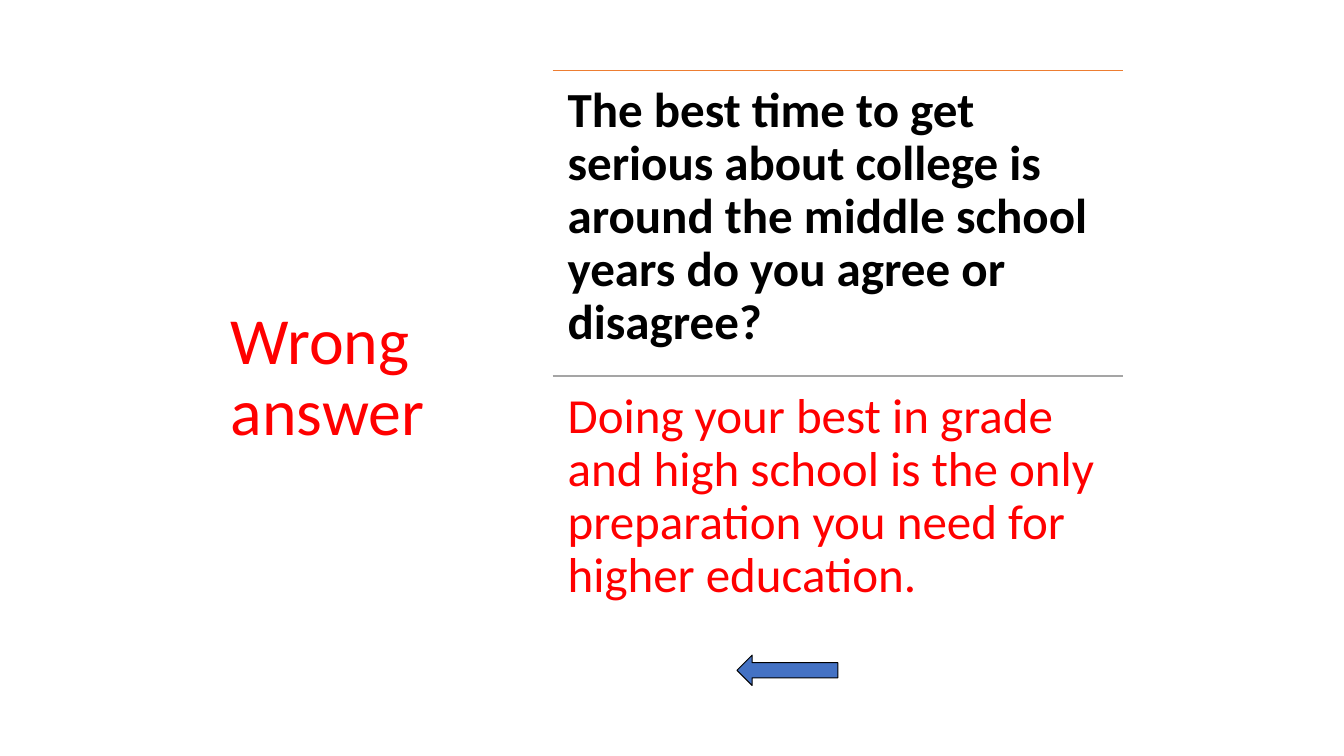
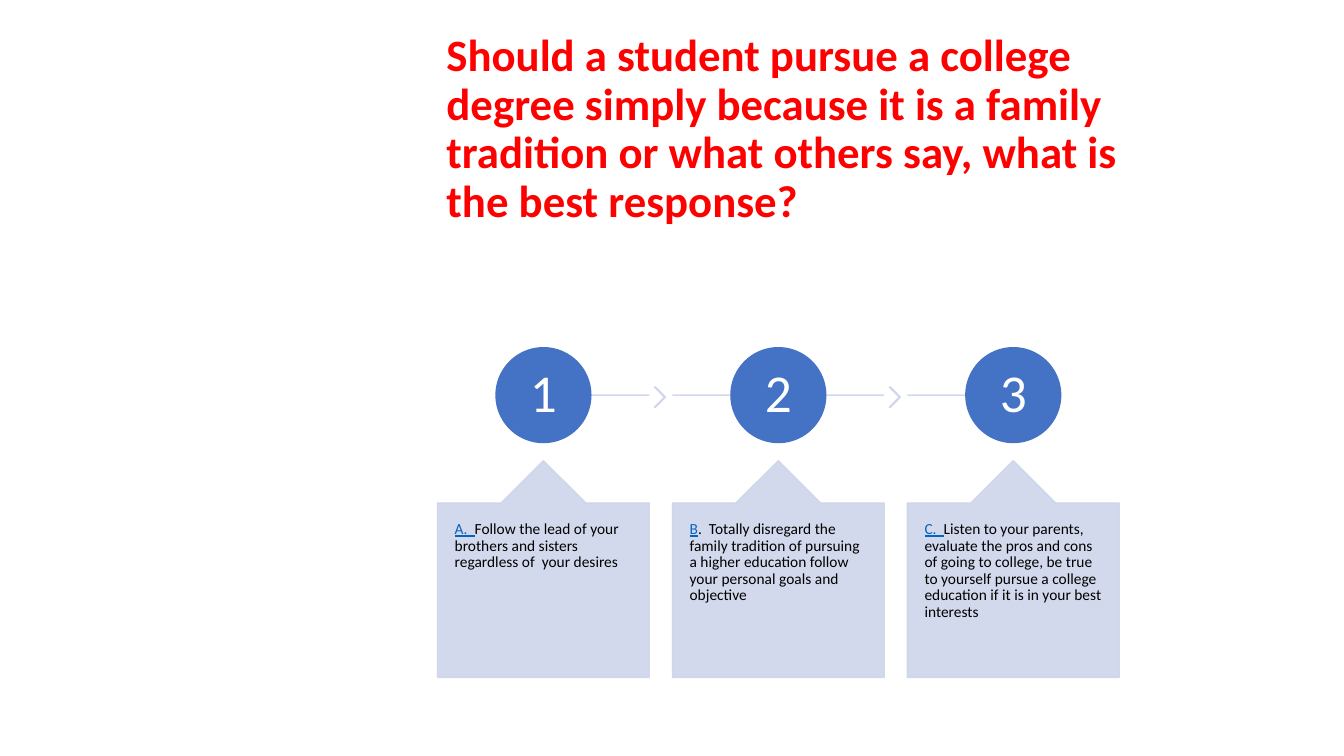
from dataclasses import dataclass
from typing import NamedTuple

from pptx import Presentation
from pptx.dml.color import RGBColor
from pptx.enum.shapes import MSO_CONNECTOR, MSO_SHAPE
from pptx.enum.text import MSO_ANCHOR, PP_ALIGN
from pptx.oxml.ns import qn
from pptx.oxml.xmlchemy import OxmlElement
from pptx.util import Inches, Pt

STRAIGHT = MSO_CONNECTOR.STRAIGHT
CHEVRON = MSO_SHAPE.CHEVRON
CIRCLE = MSO_SHAPE.OVAL
CALLOUT = MSO_SHAPE.UP_ARROW_CALLOUT
LEFT_ARROW = MSO_SHAPE.LEFT_ARROW
TOP, MIDDLE = MSO_ANCHOR.TOP, MSO_ANCHOR.MIDDLE
LEFT, CENTER = PP_ALIGN.LEFT, PP_ALIGN.CENTER


@dataclass(frozen=True)
class Theme:
    font: str = "Calibri"
    black: str = "000000"
    white: str = "FFFFFF"
    red: str = "FF0000"
    blue: str = "4472C4"
    pale_blue: str = "CFD5EA"
    orange: str = "ED7D31"
    gray: str = "A5A5A5"
    link: str = "0563C1"
    pale_opacity: int = 90
    line_spacing: float = 0.9
    verdict_size: int = 47
    number_size: int = 38
    statement_size: int = 35
    question_size: int = 32
    answer_size: int = 11


THEME = Theme()


class Box(NamedTuple):
    left: float
    top: float
    width: float
    height: float

    def lengths(self) -> list:
        return [Inches(value) for value in self]


class Run(NamedTuple):
    text: str
    size: int
    color: str
    bold: bool = False
    underline: bool = False


class Statement(NamedTuple):
    text: str
    color: str
    bold: bool
    rule_color: str


class Answer(NamedTuple):
    label: str
    text: str


STATEMENTS = [
    Statement("The best time to get serious about college is around the middle "
              "school years do you agree or disagree?",
              THEME.black, True, THEME.orange),
    Statement("Doing your best in grade and high school is the only preparation "
              "you need for higher education.",
              THEME.red, False, THEME.gray),
]
ANSWERS = [
    Answer("A.  ", "Follow the lead of your brothers and sisters regardless of  "
           "your desires"),
    Answer("B", ".  Totally disregard the family tradition of pursuing a higher "
           "education follow your personal goals and objective"),
    Answer("C.  ", "Listen to your parents, evaluate the pros and cons  of going "
           "to college, be true to yourself pursue a college education if it is "
           "in your best interests"),
]


def write(shape, runs: list[Run], anchor=TOP, align=LEFT,
          insets: tuple[float, float] = (0.1, 0.05)) -> None:
    """Fill a shape with one paragraph; insets are horizontal, vertical."""
    frame = shape.text_frame
    frame.word_wrap = True
    frame.vertical_anchor = anchor
    frame.margin_left = frame.margin_right = Inches(insets[0])
    frame.margin_top = frame.margin_bottom = Inches(insets[1])
    paragraph = frame.paragraphs[0]
    paragraph.alignment = align
    paragraph.line_spacing = THEME.line_spacing
    for item in runs:
        run = paragraph.add_run()
        run.text = item.text
        run.font.name = THEME.font
        run.font.size = Pt(item.size)
        run.font.bold = item.bold
        run.font.underline = item.underline
        run.font.color.rgb = RGBColor.from_string(item.color)


def add_text(slide, box: Box, run: Run, anchor=TOP,
             insets: tuple[float, float] = (0.1, 0.05)) -> None:
    write(slide.shapes.add_textbox(*box.lengths()), [run], anchor, insets=insets)


def set_opacity(shape, percent: int) -> None:
    for color in shape._element.spPr.iter(qn("a:srgbClr")):
        alpha = OxmlElement("a:alpha")
        alpha.set("val", str(percent * 1000))
        color.append(alpha)


def add_shape(slide, kind, box: Box, fill: str, line: str, line_width: float = 1,
              opacity: int = 100, adjustments: tuple[float, ...] = ()):
    shape = slide.shapes.add_shape(kind, *box.lengths())
    shape.shadow.inherit = False
    shape.fill.solid()
    shape.fill.fore_color.rgb = RGBColor.from_string(fill)
    shape.line.color.rgb = RGBColor.from_string(line)
    shape.line.width = Pt(line_width)
    for index, value in enumerate(adjustments):
        shape.adjustments[index] = value
    if opacity < 100:
        set_opacity(shape, opacity)
    return shape


def add_pale_shape(slide, kind, box: Box, adjustments: tuple[float, ...]):
    return add_shape(slide, kind, box, THEME.pale_blue, THEME.pale_blue,
                     opacity=THEME.pale_opacity, adjustments=adjustments)


def add_rule(slide, left: float, right: float, y: float, color: str,
             opacity: int = 100) -> None:
    rule = slide.shapes.add_connector(
        STRAIGHT, Inches(left), Inches(y), Inches(right), Inches(y))
    rule.line.color.rgb = RGBColor.from_string(color)
    rule.line.width = Pt(1)
    rule._element.spPr.append(OxmlElement("a:effectLst"))
    if opacity < 100:
        set_opacity(rule, opacity)


def add_blank_slide(presentation):
    return presentation.slides.add_slide(presentation.slide_layouts[6])


def build_wrong_answer(presentation) -> None:
    slide = add_blank_slide(presentation)
    add_text(slide, Box(2.19, 0.7, 2.8, 6.11),
             Run("Wrong answer", THEME.verdict_size, THEME.red), MIDDLE)
    left, top, width, height = 5.48, 0.7, 5.66, 3.03
    for index, statement in enumerate(STATEMENTS):
        y = top + index * height
        add_rule(slide, left, left + width, y, statement.rule_color)
        add_text(slide, Box(left, y, width, height),
                 Run(statement.text, THEME.statement_size, statement.color,
                     statement.bold), insets=(0.15, 0.15))
    add_shape(slide, LEFT_ARROW, Box(7.31, 6.5, 1, 0.3),
              THEME.blue, THEME.black, 0.75)


def build_question(presentation) -> None:
    slide = add_blank_slide(presentation)
    add_text(slide, Box(4.33, 0.25, 7.33, 2.08),
             Run("Should a student pursue a college degree simply because it is a "
                 "family tradition or what others say, what is the best response?",
                 THEME.question_size, THEME.red, bold=True), MIDDLE)
    first_left, step, width = 4.34, 2.33, 2.1
    track_y, diameter = 3.92, 0.94
    last = len(ANSWERS) - 1
    for index, answer in enumerate(ANSWERS):
        left = first_left + index * step
        center, right = left + width / 2, left + width
        add_rule(slide, center if index == 0 else left,
                 center if index == last else right,
                 track_y, THEME.pale_blue, THEME.pale_opacity)
        if index < last:
            add_pale_shape(slide, CHEVRON, Box(right + 0.05, 3.84, 0.11, 0.2),
                           (0.9,))
        circle = add_shape(slide, CIRCLE,
                           Box(center - diameter / 2, track_y - diameter / 2,
                               diameter, diameter), THEME.blue, THEME.blue)
        write(circle, [Run(str(index + 1), THEME.number_size, THEME.white)],
              MIDDLE, CENTER, (0.04, 0.04))
        callout = add_pale_shape(slide, CALLOUT, Box(left, 4.57, width, 2.15),
                                 (0.5, 0.2, 0.2, 1))
        write(callout, [Run(answer.label, THEME.answer_size, THEME.link,
                            underline=True),
                        Run(answer.text, THEME.answer_size, THEME.black)],
              insets=(0.17, 0.18))


def main() -> None:
    presentation = Presentation()
    presentation.slide_width = Inches(13.33)
    presentation.slide_height = Inches(7.5)
    build_wrong_answer(presentation)
    build_question(presentation)
    presentation.save("out.pptx")


if __name__ == "__main__":
    main()
